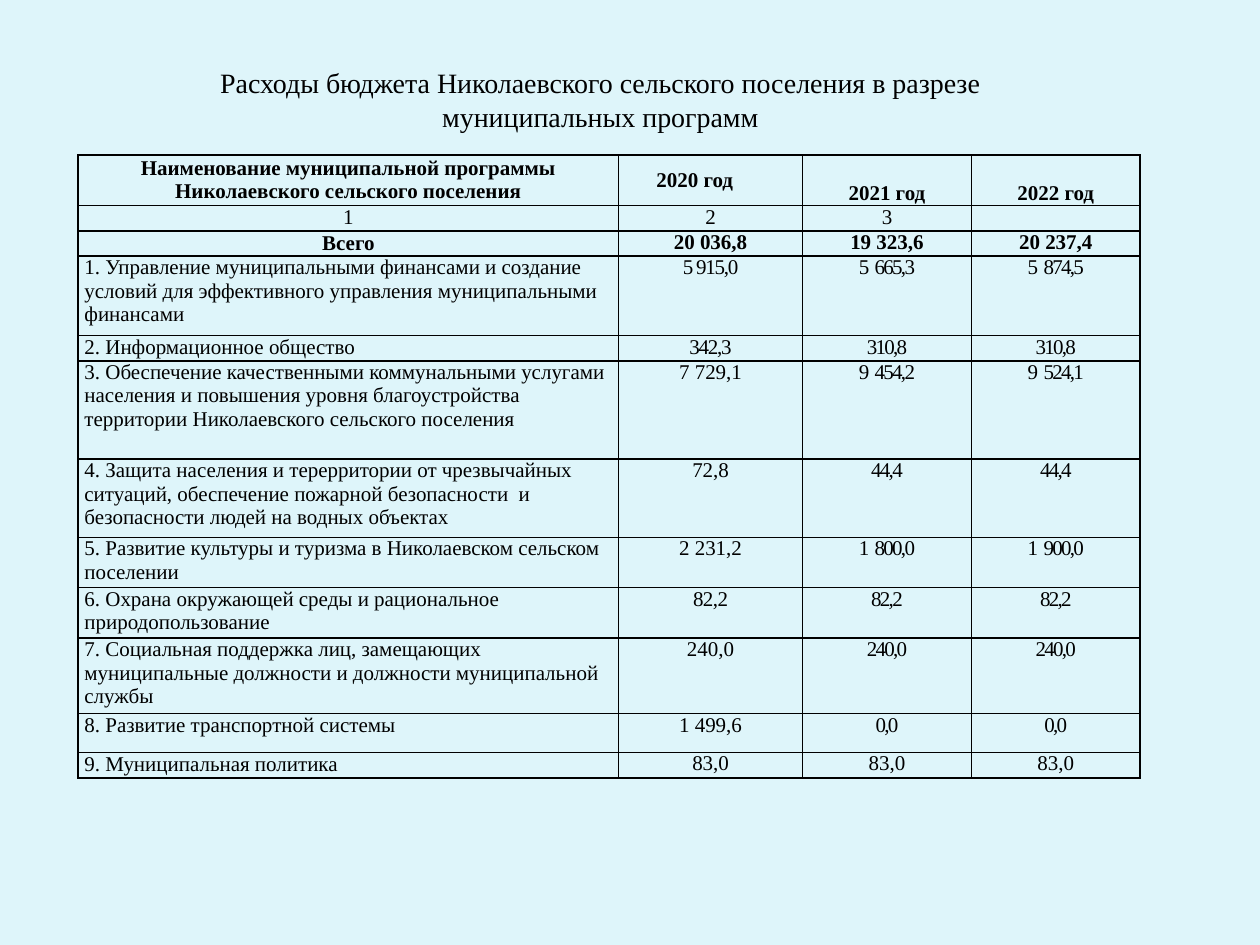
from lxml.etree import SubElement
from pptx import Presentation
from pptx.dml.color import RGBColor
from pptx.enum.text import MSO_ANCHOR, MSO_AUTO_SIZE, PP_ALIGN
from pptx.oxml.ns import qn
from pptx.util import Inches, Pt

WIDE, HIGH = 10, 7.5
FONT = "Times New Roman"
HUES = {"back": "DEF5FA", "ink": "000000"}
TITLE = (0.086, 0.063, 0.781, 0.085)
GRID = (0.062, 0.164, 0.843, 0.659)
COLS = [4.29, 1.46, 1.34, 1.34]
ROWS = [0.4, 0.2, 0.2, 0.63, 0.2, 0.78, 0.62, 0.4, 0.4, 0.6, 0.31, 0.2]
HEAD = ["Наименование муниципальной программы Николаевского сельского поселения",
        "2020 год", "2021 год", "2022 год"]
MARKS = ["1", "2", "3", ""]
TOTAL = ["Всего", "20 036,8", "19 323,6", "20 237,4"]
# Each programme: name, three yearly sums, letter spacing of the first sum and of the others
ITEMS = [
    ("1. Управление муниципальными финансами и создание условий для эффективного "
     "управления муниципальными финансами", "5 915,0", "5  665,3", "5  874,5", -0.7, -1),
    ("2. Информационное общество", "342,3", "310,8", "310,8", -0.7, -1),
    ("3. Обеспечение качественными коммунальными услугами населения и повышения уровня "
     "благоустройства территории Николаевского сельского поселения",
     "7 729,1", "9  454,2", "9  524,1", 0, -1),
    ("4. Защита населения и терерритории от чрезвычайных ситуаций, обеспечение пожарной "
     "безопасности  и безопасности людей на водных объектах", "72,8", "44,4", "44,4", 0, -1),
    ("5. Развитие культуры и туризма в Николаевском сельском поселении",
     "2 231,2", "1  800,0", "1  900,0", 0, -1),
    ("6. Охрана окружающей среды и рациональное природопользование",
     "82,2", "82,2", "82,2", -0.3, -1),
    ("7. Социальная поддержка лиц, замещающих муниципальные должности и должности "
     "муниципальной службы", "240,0", "240,0", "240,0", 0, -1),
    ("8. Развитие транспортной системы", "1 499,6", "0,0", "0,0", 0, -1),
    ("9. Муниципальная политика", "83,0", "83,0", "83,0", 0, 0),
]


def color(name):
    return RGBColor.from_string(HUES[name])


def scale(box):
    """Turn shares of the slide into lengths."""
    return [Inches(part * side) for part, side in zip(box, (WIDE, HIGH) * 2)]


def write(frame, text, size=12, bold=False, align=PP_ALIGN.CENTER, space=0, line=None):
    frame.word_wrap = True
    para = frame.paragraphs[0]
    para.alignment = align
    if line:
        para.line_spacing = line
    if not text:
        SubElement(para._p, qn("a:endParaRPr"), sz=str(size * 100))
        return
    run = para.add_run()
    run.text = text
    run.font.name, run.font.size, run.font.bold = FONT, Pt(size), bold
    run.font.color.rgb = color("ink")
    if space:
        run._r.get_or_add_rPr().set("spc", str(round(space * 100)))


def frame_cell(cell):
    """Give a cell its insets, four borders and no fill."""
    cell.margin_left = cell.margin_right = Inches(0.05)
    cell.margin_top = cell.margin_bottom = 0
    props = cell._tc.get_or_add_tcPr()
    for side in ("lnL", "lnR", "lnT", "lnB"):
        edge = SubElement(props, qn("a:" + side), w=str(Pt(1)))
        fill = SubElement(edge, qn("a:solidFill"))
        SubElement(fill, qn("a:srgbClr"), val=HUES["ink"])
    cell.fill.background()


def add_title(slide, box):
    frame = slide.shapes.add_textbox(*scale(box)).text_frame
    write(frame, "Расходы бюджета Николаевского сельского поселения в разрезе "
          "муниципальных программ", size=16)
    frame.auto_size = MSO_AUTO_SIZE.SHAPE_TO_FIT_TEXT


def fill_head(table):
    for col, text in enumerate(HEAD):
        cell = table.cell(0, col)
        cell.vertical_anchor = MSO_ANCHOR.MIDDLE if col < 2 else MSO_ANCHOR.BOTTOM
        write(cell.text_frame, text, bold=True,
              align=PP_ALIGN.LEFT if col == 1 else PP_ALIGN.CENTER)
    table.cell(0, 1).margin_left = Inches(0.3)
    for col, (mark, total) in enumerate(zip(MARKS, TOTAL)):
        write(table.cell(1, col).text_frame, mark)
        write(table.cell(2, col).text_frame, total, bold=True)
    table.cell(2, 0).vertical_anchor = MSO_ANCHOR.MIDDLE


def fill_items(table):
    last = len(ROWS) - 1
    for row, (name, *sums, first, rest) in enumerate(ITEMS, 3):
        write(table.cell(row, 0).text_frame, name, align=PP_ALIGN.LEFT)
        for col, (text, space) in enumerate(zip(sums, (first, rest, rest)), 1):
            write(table.cell(row, col).text_frame, text, space=space,
                  line=0.95 if row == last else None)


def add_budget(slide, box):
    left, top, width, height = scale(box)
    table = slide.shapes.add_table(len(ROWS), len(COLS), left, top, width, height).table
    table.first_row = table.horz_banding = False
    for col, share in zip(table.columns, COLS):
        col.width = round(width * share / sum(COLS))
    for row, share in zip(table.rows, ROWS):
        row.height = round(height * share / sum(ROWS))
    for cell in table.iter_cells():
        frame_cell(cell)
    fill_head(table)
    fill_items(table)


def main():
    deck = Presentation()
    deck.slide_width, deck.slide_height = Inches(WIDE), Inches(HIGH)
    slide = deck.slides.add_slide(deck.slide_layouts[6])
    slide.background.fill.solid()
    slide.background.fill.fore_color.rgb = color("back")
    add_budget(slide, GRID)
    add_title(slide, TITLE)
    deck.save("out.pptx")


if __name__ == "__main__":
    main()
